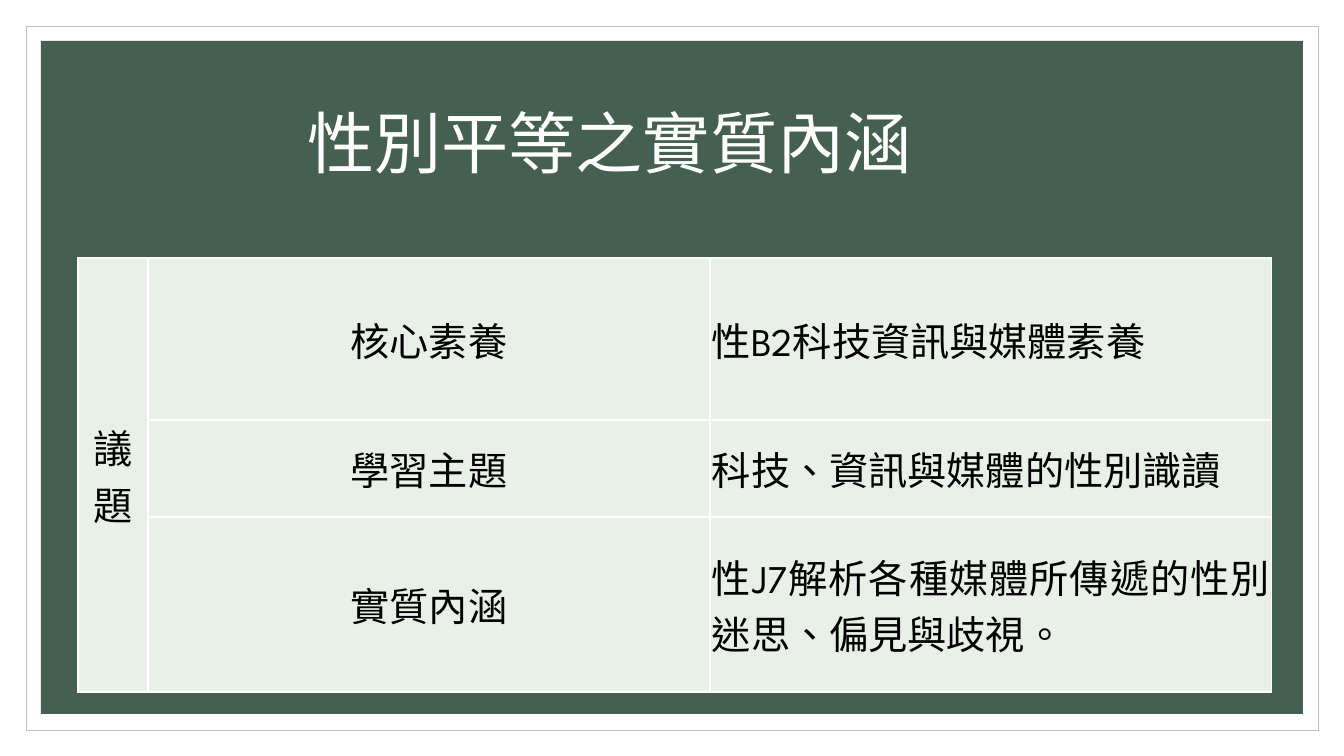
"""Build the slide on the substance of gender equality."""
from lxml import etree
from pptx import Presentation
from pptx.dml.color import RGBColor
from pptx.enum.lang import MSO_LANGUAGE_ID
from pptx.enum.shapes import MSO_SHAPE
from pptx.enum.text import MSO_ANCHOR, PP_ALIGN
from pptx.oxml.ns import qn
from pptx.util import Emu, Pt

RECT = MSO_SHAPE.RECTANGLE
MIDDLE = MSO_ANCHOR.MIDDLE
LEFT, CENTER, JUSTIFY = PP_ALIGN.LEFT, PP_ALIGN.CENTER, PP_ALIGN.JUSTIFY
CHINESE = MSO_LANGUAGE_ID.TRADITIONAL_CHINESE

SPARTAN, TIMES = "League Spartan", "Times New Roman"
WHITE, BLACK, GREEN, PALE, GREY = "FFFFFF", "000000", "455F51", "E9F0E8", "BFBFBF"

TITLE = "性別平等之實質內涵"
TITLE_BOX = (118, 71, 1109, 151)
TITLE_INDENT = 189
FRAMES = [
    ((26, 26, 1292, 704), WHITE, GREY),
    ((41, 41, 1262, 673), GREEN, None),
]
TABLE_AT = (78, 258)
COLUMNS = [70, 562, 562]
ROWS = [162, 97, 175]
TOPIC = "議題"
ENTRIES = [
    ("核心素養", "性B2科技資訊與媒體素養", SPARTAN, LEFT),
    ("學習主題", "科技、資訊與媒體的性別識讀", TIMES, LEFT),
    ("實質內涵", "性J7解析各種媒體所傳遞的性別迷思、偏見與歧視。", SPARTAN, JUSTIFY),
]


def px(n):
    return Emu(round(n * 914400 / 100.8))


def rgb(value):
    return RGBColor.from_string(value)


def write(tf, text, size, color, align, font=SPARTAN):
    tf.text = text
    p = tf.paragraphs[0]
    p.alignment = align
    f = p.runs[0].font
    f.name, f.size, f.language_id = font, Pt(size), CHINESE
    f.color.rgb = rgb(color)
    return p


def add_frame(slide, box, fill, line):
    sp = slide.shapes.add_shape(RECT, *map(px, box))
    sp.shadow.inherit = False
    sp.fill.solid()
    sp.fill.fore_color.rgb = rgb(fill)
    if line:
        sp.line.color.rgb = rgb(line)
        sp.line.width = Pt(0.5)
    else:
        sp.line.fill.background()


def style_cell(cell):
    cell.fill.solid()
    cell.fill.fore_color.rgb = rgb(PALE)
    cell.vertical_anchor = MIDDLE
    cell.margin_left = cell.margin_right = px(2)
    cell.margin_top = cell.margin_bottom = 0
    tc_pr = cell._tc.get_or_add_tcPr()
    for i, side in enumerate(("lnL", "lnR", "lnT", "lnB")):
        ln = etree.Element(qn(f"a:{side}"), w=str(Pt(1)))
        fill = etree.SubElement(ln, qn("a:solidFill"))
        etree.SubElement(fill, qn("a:srgbClr"), val=WHITE)
        tc_pr.insert(i, ln)


def add_title(slide):
    title = slide.shapes.title
    title.left, title.top, title.width, title.height = map(px, TITLE_BOX)
    tf = title.text_frame
    tf.word_wrap = True
    tf.vertical_anchor = MIDDLE
    tf.margin_left = px(TITLE_INDENT)
    write(tf, TITLE, 48, WHITE, LEFT).line_spacing = 0.9
    slide.shapes._spTree.append(title._element)


def add_topic_table(slide):
    box = (*TABLE_AT, sum(COLUMNS), sum(ROWS))
    table = slide.shapes.add_table(len(ROWS), len(COLUMNS), *map(px, box)).table
    for column, width in zip(table.columns, COLUMNS):
        column.width = px(width)
    for row, height in zip(table.rows, ROWS):
        row.height = px(height)
    for cell in table.iter_cells():
        style_cell(cell)
    table.cell(0, 0).merge(table.cell(len(ROWS) - 1, 0))
    write(table.cell(0, 0).text_frame, TOPIC, 28, BLACK, CENTER)
    for i, (label, text, font, align) in enumerate(ENTRIES):
        write(table.cell(i, 1).text_frame, label, 28, BLACK, CENTER)
        write(table.cell(i, 2).text_frame, text, 28, BLACK, align, font)


def main():
    prs = Presentation()
    prs.slide_width, prs.slide_height = px(1344), px(756)
    slide = prs.slides.add_slide(prs.slide_layouts[5])
    for frame in FRAMES:
        add_frame(slide, *frame)
    add_title(slide)
    add_topic_table(slide)
    prs.save("out.pptx")


if __name__ == "__main__":
    main()
